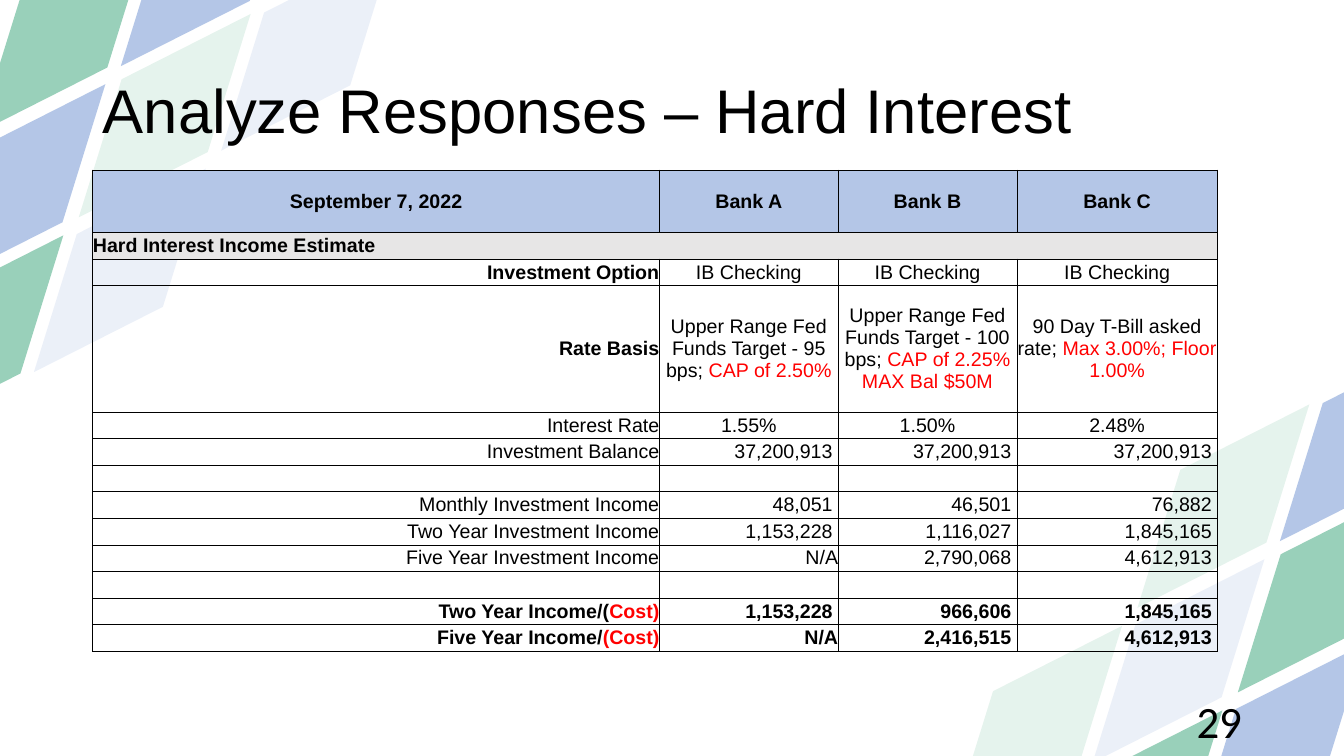
import dataclasses
import itertools

import lxml.etree
import pptx
import pptx.dml.color
import pptx.enum.shapes
import pptx.enum.text
import pptx.oxml.ns
import pptx.util

Cm = pptx.util.Cm
Pt = pptx.util.Pt
ALIGN = pptx.enum.text.PP_ALIGN
MIDDLE = pptx.enum.text.MSO_ANCHOR.MIDDLE
qn = pptx.oxml.ns.qn


@dataclasses.dataclass(frozen=True)
class Theme:
    ink: str = "000000"
    alert: str = "FF0000"
    green: str = "008A54"
    blue: str = "4472C4"
    header: str = "B4C6E7"
    section: str = "E7E6E6"
    font: str = "Arial"
    number_font: str = "Calibri"
    title_size: int = 44
    number_size: int = 32
    table_size: int = 14
    thick: float = 1
    thin: float = 0.5


THEME = Theme()


@dataclasses.dataclass(frozen=True)
class Box:
    """A region in centimetres."""
    left: float
    top: float
    width: float
    height: float

    def lengths(self):
        return [Cm(length) for length in dataclasses.astuple(self)]


@dataclasses.dataclass(frozen=True)
class Row:
    """One table row; a (plain, alert) pair is a text with a red ending."""
    cells: tuple
    label_align: ALIGN = ALIGN.RIGHT
    align: ALIGN = ALIGN.RIGHT
    label_bold: bool = False
    bold: bool = False
    fill: str = ""
    height: float = 0.67


BLANK = Row(("", "", "", ""))
ROWS = [
    Row(("September 7, 2022", "Bank A", "Bank B", "Bank C"), ALIGN.CENTER, ALIGN.CENTER,
        True, True, THEME.header, 1.57),
    Row(("Hard Interest Income Estimate", "", "", ""), ALIGN.LEFT,
        label_bold=True, fill=THEME.section),
    Row(("Investment Option", "IB Checking", "IB Checking", "IB Checking"),
        align=ALIGN.CENTER, label_bold=True),
    Row(("Rate Basis",
         ("Upper Range Fed Funds Target - 95 bps; ", "CAP of 2.50%"),
         ("Upper Range Fed Funds Target - 100 bps; ", "CAP of 2.25%\nMAX Bal $50M"),
         ("90 Day T-Bill asked rate; ", "Max 3.00%; Floor 1.00%")),
        align=ALIGN.CENTER, label_bold=True, height=3.18),
    Row(("Interest Rate", "1.55%", "1.50%", "2.48%"), align=ALIGN.CENTER),
    Row(("Investment Balance", "37,200,913 ", "37,200,913 ", "37,200,913 ")),
    BLANK,
    Row(("Monthly Investment Income", "48,051 ", "46,501 ", "76,882 ")),
    Row(("Two Year Investment Income", "1,153,228 ", "1,116,027 ", "1,845,165 ")),
    Row(("Five Year Investment Income", "N/A", "2,790,068 ", "4,612,913 ")),
    BLANK,
    Row((("Two Year Income/(", "Cost)"), "1,153,228 ", "966,606 ", "1,845,165 "),
        label_bold=True, bold=True),
    Row((("Five Year Income/", "(Cost)"), "N/A", "2,416,515 ", "4,612,913 "),
        label_bold=True, bold=True),
]
HEADER, SECTION, LAST = 0, 1, len(ROWS) - 1
COLUMN_SHARES = (14.27, 4.5, 4.5, 5.05)

# Opacity in percent by block, row and column; None leaves a gap in the lattice.
RIGHT_LATTICE = (10, 40, 40, None, 10, 10, 40, 40)
LEFT_LATTICE = (40, 40, 10, 10, None, 40, 40, 10)


def rgb(color):
    return pptx.dml.color.RGBColor.from_string(color)


def set_font(font, name, size, bold=None):
    font.name, font.size, font.bold = name, Pt(size), bold
    font.color.rgb = rgb(THEME.ink)


def add_lattice(slide, first, opacities):
    """Lay two blocks of 2 x 2 slanted diamonds, starting at the box of the first."""
    places = itertools.product(range(2), repeat=3)
    for (block, row, column), opacity in zip(places, opacities):
        if opacity is None:
            continue
        spot = dataclasses.replace(
            first,
            left=first.left - 4.72 * block + 2.53 * row + 3.59 * column,
            top=first.top + 5.58 * block + 2.13 * row - 1.68 * column)
        diamond = slide.shapes.add_shape(
            pptx.enum.shapes.MSO_SHAPE.DIAMOND, *spot.lengths())
        diamond.rotation = 40.2
        diamond.shadow.inherit = False
        diamond.line.fill.background()
        diamond.fill.solid()
        diamond.fill.fore_color.rgb = rgb(THEME.blue if column else THEME.green)
        tint = diamond.element.spPr.find(".//" + qn("a:srgbClr"))
        lxml.etree.SubElement(tint, qn("a:alpha"), val=str(opacity * 1000))


def add_title(slide, box, wording):
    title = slide.shapes.title
    title.left, title.top, title.width, title.height = box.lengths()
    title.text_frame.text = wording
    title.text_frame.vertical_anchor = MIDDLE
    heading = title.text_frame.paragraphs[0]
    heading.alignment = ALIGN.LEFT
    heading.line_spacing = 0.9
    set_font(heading.font, THEME.font, THEME.title_size)
    slide.shapes.element.append(title.element)  # in front of the lattices


def set_borders(cell, row, column):
    last_column = column == len(COLUMN_SHARES) - 1
    thick, thin = THEME.thick, THEME.thin
    inside = 0 if row == SECTION else thin
    widths = {
        "a:lnL": thick if column == 0 else inside,
        "a:lnR": (thick if row == HEADER else thin) if last_column else inside,
        "a:lnT": thick if row <= SECTION + 1 else thin,
        "a:lnB": thick if row in (HEADER, SECTION, LAST) else thin,
    }
    properties = cell._tc.get_or_add_tcPr()
    for tag, width in widths.items():
        edge = lxml.etree.SubElement(properties, qn(tag), w=str(int(Pt(width))))
        if width:
            paint = lxml.etree.SubElement(edge, qn("a:solidFill"))
            lxml.etree.SubElement(paint, qn("a:srgbClr"), val=THEME.ink)
        else:
            lxml.etree.SubElement(edge, qn("a:noFill"))


def write_cell(cell, content, align, bold):
    cell.margin_left = cell.margin_right = cell.margin_top = cell.margin_bottom = 0
    cell.vertical_anchor = MIDDLE
    paragraph = cell.text_frame.paragraphs[0]
    paragraph.alignment = align
    set_font(paragraph.font, THEME.font, THEME.table_size, bold)
    if not content:
        lxml.etree.SubElement(paragraph._p, qn("a:endParaRPr"),
                              sz=str(THEME.table_size * 100))
        return
    plain, alert = (content, "") if isinstance(content, str) else content
    paragraph.add_run().text = plain
    for number, line in enumerate(alert.split("\n") if alert else ()):
        if number:
            paragraph.add_line_break()
        run = paragraph.add_run()
        run.text = line
        run.font.color.rgb = rgb(THEME.alert)


def add_estimate_table(slide, box):
    table = slide.shapes.add_table(
        len(ROWS), len(COLUMN_SHARES), *box.lengths()).table
    table.first_row = table.horz_banding = False
    for column, share in zip(table.columns, COLUMN_SHARES):
        column.width = Cm(box.width * share / sum(COLUMN_SHARES))
    for r, row in enumerate(ROWS):
        table.rows[r].height = Cm(row.height)
        for c, content in enumerate(row.cells):
            cell = table.cell(r, c)
            set_borders(cell, r, c)
            if row.fill:
                cell.fill.solid()
                cell.fill.fore_color.rgb = rgb(row.fill)
            else:
                cell.fill.background()
            write_cell(cell, content, row.align if c else row.label_align,
                       row.bold if c else row.label_bold)


def add_page_number(slide, box, number):
    frame = slide.shapes.add_textbox(*box.lengths()).text_frame
    frame.word_wrap = True
    frame.vertical_anchor = MIDDLE
    frame.text = number
    frame.paragraphs[0].alignment = ALIGN.RIGHT
    set_font(frame.paragraphs[0].font, THEME.number_font, THEME.number_size)


def main():
    deck = pptx.Presentation()
    deck.slide_width, deck.slide_height = Cm(33.87), Cm(19.05)
    slide = deck.slides.add_slide(deck.slide_layouts.get_by_name("Title Only"))
    add_lattice(slide, Box(29.41, 9.4, 2.84, 6.71), RIGHT_LATTICE)
    add_lattice(slide, Box(0.2, -2.57, 2.84, 6.71), LEFT_LATTICE)
    add_title(slide, Box(2.34, 1.02, 29.21, 3.68), "Analyze Responses – Hard Interest")
    add_estimate_table(slide, Box(2.34, 4.29, 28.34, 12.1))
    add_page_number(slide, Box(23.93, 17.65, 7.62, 1.02), "29")
    deck.save("out.pptx")


if __name__ == "__main__":
    main()
